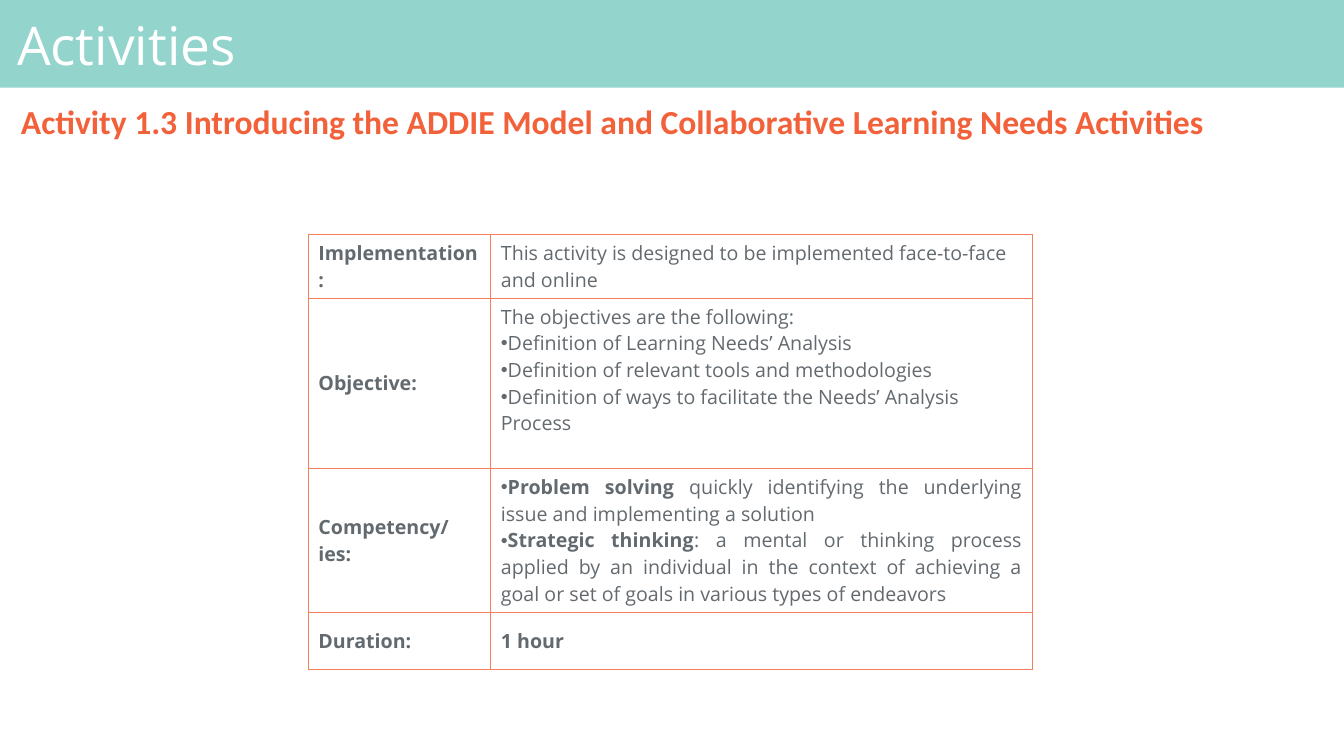
"""Builds the Activity 1.3 slide with its summary table."""
import pptx
import pptx.util
import pptx.dml.color
import pptx.enum.shapes
import pptx.enum.text
import pptx.oxml.ns
import lxml.etree

Cm, Pt = pptx.util.Cm, pptx.util.Pt
RGB = pptx.dml.color.RGBColor.from_string
ALIGN, ANCHOR = pptx.enum.text.PP_ALIGN, pptx.enum.text.MSO_ANCHOR
qn = pptx.oxml.ns.qn

TITLE = "Activities"
SUBTITLE = "Activity 1.3 Introducing the ADDIE Model and Collaborative Learning Needs Activities"
PLAIN, BULLET, JUSTIFIED = "plain", "bullet", "justified"
ROWS = [
    ("Implementation:", 1.59, ANCHOR.MIDDLE, [
        (PLAIN, [("This activity is designed to be implemented face-to-face and online", False)]),
    ]),
    ("Objective:", 4.29, ANCHOR.TOP, [
        (PLAIN, [("The objectives are the following:", False)]),
        (BULLET, [("Definition of Learning Needs’ Analysis", False)]),
        (BULLET, [("Definition of relevant tools and methodologies", False)]),
        (BULLET, [("Definition of ways to facilitate the Needs’ Analysis Process", False)]),
    ]),
    ("Competency/ies:", 3.63, ANCHOR.MIDDLE, [
        (JUSTIFIED, [("Problem solving", True),
                     (" quickly identifying the underlying issue and implementing a solution", False)]),
        (JUSTIFIED, [("Strategic thinking", True),
                     (": a mental or thinking process applied by an individual in the context of "
                      "achieving a goal or set of goals in various types of endeavors", False)]),
    ]),
    ("Duration:", 1.44, ANCHOR.MIDDLE, [(PLAIN, [("1 hour", True)])]),
]
COLUMNS = (4.6, 13.64)
TABLE_LEFT, TABLE_TOP = 7.77, 5.92
THEME = {
    "band": "93D4CC", "border": "F47F5D", "border_width": Pt(0.75),
    "title": ("Open Sans", 38, "FFFFFF"),
    "subtitle": ("Calibri", 24, "F2613A"),
    "body": ("Open Sans", 14, "636A6F"),
}


def add_run(p, text, style, bold=False):
    r = p.add_run()
    r.text = text
    name, size, color = THEME[style]
    r.font.name, r.font.size, r.font.bold = name, Pt(size), bold
    r.font.color.rgb = RGB(color)


def add_heading(slide, box, text, style, inset, bold, align):
    sp = slide.shapes.add_textbox(*map(Cm, box))
    tf = sp.text_frame
    tf.word_wrap = True
    tf.vertical_anchor = ANCHOR.MIDDLE
    tf.margin_left = tf.margin_right = Cm(inset[0])
    tf.margin_top = tf.margin_bottom = Cm(inset[1])
    p = tf.paragraphs[0]
    p.alignment, p.line_spacing = align, 0.9
    add_run(p, text, style, bold)


def add_bullet(p):
    pPr = p._p.get_or_add_pPr()
    pPr.set("marL", "0")
    pPr.set("indent", str(-Cm(0.25)))
    color = lxml.etree.SubElement(pPr, qn("a:buClr"))
    lxml.etree.SubElement(color, qn("a:srgbClr"), val=THEME["body"][2])
    lxml.etree.SubElement(pPr, qn("a:buFont"), typeface="Arial")
    lxml.etree.SubElement(pPr, qn("a:buChar"), char="•")


def add_borders(cell):
    tcPr = cell._tc.get_or_add_tcPr()
    for i, side in enumerate(("lnL", "lnR", "lnT", "lnB")):
        ln = lxml.etree.Element(qn(f"a:{side}"), w=str(THEME["border_width"]))
        fill = lxml.etree.SubElement(ln, qn("a:solidFill"))
        lxml.etree.SubElement(fill, qn("a:srgbClr"), val=THEME["border"])
        tcPr.insert(i, ln)


def fill_cell(cell, paragraphs, anchor):
    cell.fill.background()
    cell.vertical_anchor = anchor
    add_borders(cell)
    tf = cell.text_frame
    for i, (kind, runs) in enumerate(paragraphs):
        p = tf.add_paragraph() if i else tf.paragraphs[0]
        p.alignment = ALIGN.JUSTIFY if kind == JUSTIFIED else ALIGN.LEFT
        if kind != PLAIN:
            add_bullet(p)
        for text, bold in runs:
            add_run(p, text, "body", bold)


def add_summary(slide):
    heights = [row[1] for row in ROWS]
    frame = slide.shapes.add_table(len(ROWS), len(COLUMNS), Cm(TABLE_LEFT), Cm(TABLE_TOP),
                                   Cm(sum(COLUMNS)), Cm(sum(heights)))
    table = frame.table
    table.first_row = table.horz_banding = False
    for column, width in zip(table.columns, COLUMNS):
        column.width = Cm(width)
    for i, (label, height, anchor, paragraphs) in enumerate(ROWS):
        table.rows[i].height = Cm(height)
        fill_cell(table.cell(i, 0), [(PLAIN, [(label, True)])], ANCHOR.MIDDLE)
        fill_cell(table.cell(i, 1), paragraphs, anchor)


def main():
    prs = pptx.Presentation()
    prs.slide_width, prs.slide_height = Cm(33.87), Cm(19.05)
    slide = prs.slides.add_slide(prs.slide_layouts[6])
    band = slide.shapes.add_shape(pptx.enum.shapes.MSO_SHAPE.RECTANGLE, 0, 0,
                                  prs.slide_width, Cm(2.21))
    band.shadow.inherit = False
    band.fill.solid()
    band.fill.fore_color.rgb = RGB(THEME["band"])
    band.line.fill.background()
    add_heading(slide, (0.28, 0.23, 33.17, 1.98), TITLE, "title", (0.15, 0.15), False, ALIGN.LEFT)
    add_summary(slide)
    add_heading(slide, (0.28, 2.36, 33.17, 1.52), SUBTITLE, "subtitle", (0.25, 0.13), True,
                ALIGN.JUSTIFY)
    prs.save("out.pptx")


if __name__ == "__main__":
    main()
